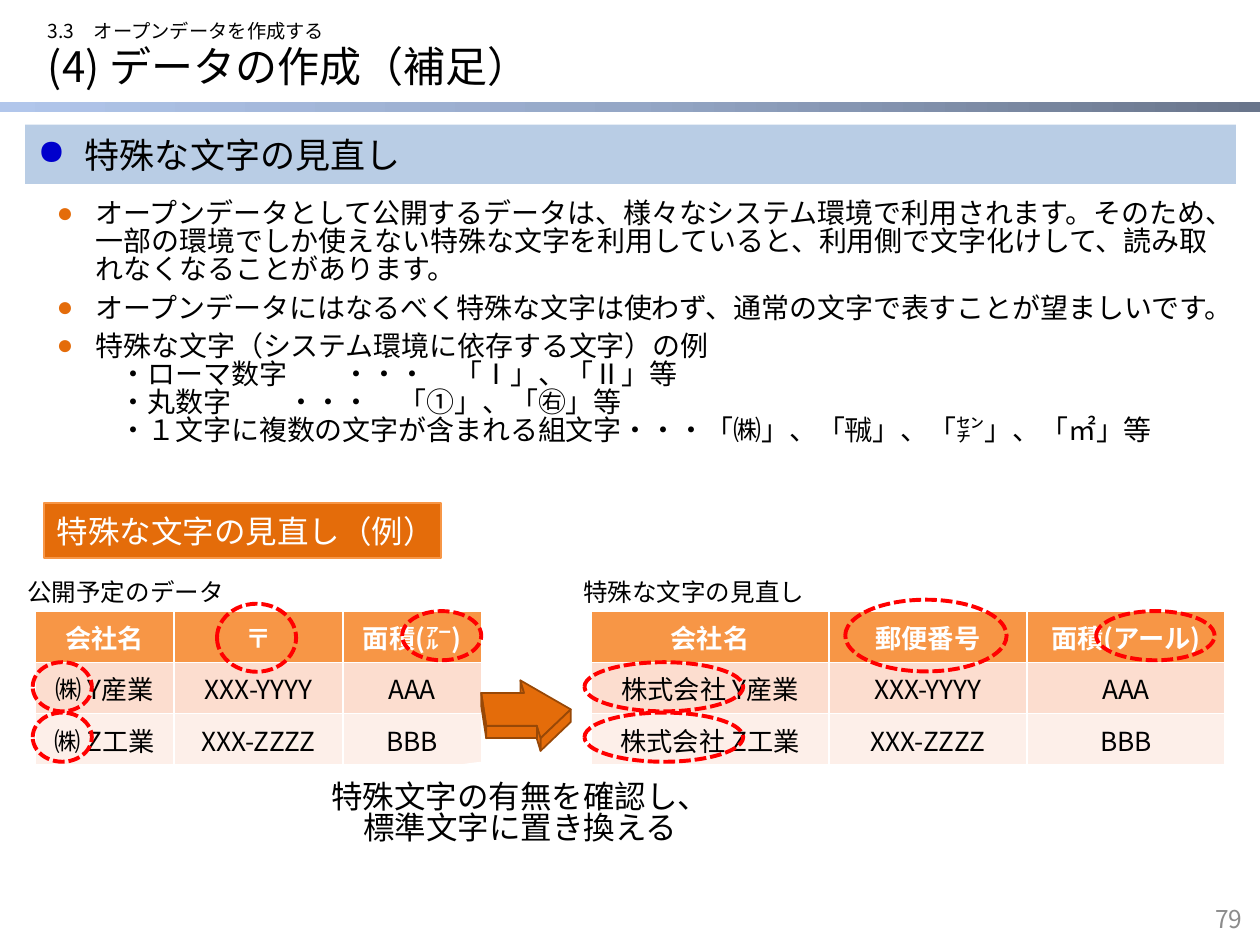
"""Build the slide on reviewing special characters in open data."""
from copy import deepcopy
from dataclasses import dataclass

from lxml import etree
from pptx import Presentation
from pptx.dml.color import RGBColor
from pptx.enum import dml, shapes, text
from pptx.oxml.ns import qn
from pptx.util import Pt


@dataclass(frozen=True)
class Theme:
    font: str = "Noto Sans CJK JP"
    black: str = "000000"
    white: str = "FFFFFF"
    gray: str = "8C8C8C"
    blue: str = "0000CC"
    band: str = "B9CDE5"
    orange: str = "E46C0A"
    header: str = "F79646"
    brown: str = "984807"
    red: str = "FF0000"
    rows: tuple = ("F79646", "FCDDCF", "FDEFE9")
    gradient: tuple = ("69758B", "95A7C6", "B1C6EB")
    title: int = 24
    heading: int = 20
    label: int = 18
    body: int = 16
    cell: int = 15
    small: int = 14
    section: int = 11


theme = Theme()
PP = text.PP_ALIGN


def write(tf, lines, size, color, align=PP.LEFT, spacing=1.0, bold=False):
    tf.text = "\n".join(lines)
    tf.vertical_anchor = text.MSO_ANCHOR.MIDDLE
    for p in tf.paragraphs:
        p.alignment, p.line_spacing = align, spacing
        p.space_before = Pt(0)
        for r in p.runs:
            r.font.size, r.font.bold = Pt(size), bold
            r.font.color.rgb = RGBColor.from_string(color)
            r.font.name = theme.font
            etree.SubElement(r.font._element, qn("a:ea"), typeface=theme.font)


def paint(sp, fill=None, line=None, width=1):
    sp.shadow.inherit = False
    if fill:
        sp.fill.solid()
        sp.fill.fore_color.rgb = RGBColor.from_string(fill)
    else:
        sp.fill.background()
    if line:
        sp.line.color.rgb = RGBColor.from_string(line)
        sp.line.width = Pt(width)
    else:
        sp.line.fill.background()


prs = Presentation()
prs.slide_width, prs.slide_height = Pt(720), Pt(540)
s = prs.slides.add_slide(prs.slide_layouts[1])
RECT, OVAL = shapes.MSO_SHAPE.RECTANGLE, shapes.MSO_SHAPE.OVAL

bar = s.shapes.add_shape(RECT, Pt(0), Pt(58.3), Pt(720), Pt(5.8))
paint(bar)
bar.fill.gradient()
bar.fill.gradient_angle = 180
stops = bar._element.find(".//" + qn("a:gsLst"))
stops.append(deepcopy(stops[0]))
for i, (stop, color) in enumerate(zip(bar.fill.gradient_stops, theme.gradient)):
    stop.position = i / 2
    stop.color.rgb = RGBColor.from_string(color)

title, body = s.placeholders
title.left, title.top, title.width, title.height = Pt(20.2), Pt(23), Pt(680.4), Pt(33.1)
write(title.text_frame, ["(4) データの作成（補足）"], theme.title, theme.black, spacing=0.9)

heading = s.shapes.add_shape(RECT, Pt(14.4), Pt(71.3), Pt(691.9), Pt(33.8))
paint(heading, theme.band)
write(heading.text_frame, ["特殊な文字の見直し"], theme.heading, theme.black)

body.left, body.top, body.width, body.height = Pt(25.2), Pt(111.6), Pt(680.4), Pt(158.4)
write(body.text_frame, [
    "オープンデータとして公開するデータは、様々なシステム環境で利用されます。そのため、一部の環境でしか使えない特殊な文字を利用していると、利用側で文字化けして、読み取れなくなることがあります。",
    "オープンデータにはなるべく特殊な文字は使わず、通常の文字で表すことが望ましいです。",
    "特殊な文字（システム環境に依存する文字）の例",
    "・ローマ数字　　・・・　「Ⅰ」、「Ⅱ」等",
    "・丸数字　　・・・　「①」、「㊨」等",
    "・１文字に複数の文字が含まれる組文字・・・「㈱」、「㍻」、「㌢」、「㎡」等",
], theme.body, theme.black, spacing=0.83)
body.text_frame.vertical_anchor = text.MSO_ANCHOR.TOP
body.text_frame.auto_size = text.MSO_AUTO_SIZE.NONE

items = body.text_frame.paragraphs
bullets = [(heading.text_frame.paragraphs[0], 27, theme.blue)]
bullets += [(p, 22.3, theme.orange) for p in items[:3]]
for p, indent, color in bullets:
    pPr = p._p.get_or_add_pPr()
    pPr.set("marL", str(Pt(indent)))
    pPr.set("indent", str(-Pt(indent)))
    clr = etree.SubElement(pPr, qn("a:buClr"))
    etree.SubElement(clr, qn("a:srgbClr"), val=color)
    etree.SubElement(pPr, qn("a:buChar"), char="●")
for p in items[:3]:
    p.space_before = Pt(6)
for p in items[3:]:
    p.level = 1
    pPr = p._p.get_or_add_pPr()
    pPr.set("marL", str(Pt(36)))
    pPr.set("indent", "0")
    etree.SubElement(pPr, qn("a:buNone"))

tables = [
    (20.2, (79.2, 96.5, 79.2), "㈱", ("会社名", "〒", "面積(㌃)")),
    (337.7, (136, 113.2, 113.2), "株式会社", ("会社名", "郵便番号", "面積(アール)")),
]
for left, widths, prefix, header in tables:
    rows = [header, (f"{prefix} Y産業", "XXX-YYYY", "AAA"), (f"{prefix} Z工業", "XXX-ZZZZ", "BBB")]
    table = s.shapes.add_table(3, 3, Pt(left), Pt(349.2), Pt(sum(widths)), Pt(87.8)).table
    for col, width in zip(table.columns, widths):
        col.width = Pt(width)
    for i, row in enumerate(rows):
        for j, value in enumerate(row):
            cell = table.cell(i, j)
            cell.margin_left = cell.margin_right = cell.margin_top = Pt(0.7)
            cell.margin_bottom = Pt(0)
            cell.fill.solid()
            cell.fill.fore_color.rgb = RGBColor.from_string(theme.rows[i])
            write(cell.text_frame, [value], theme.cell,
                  theme.black if i else theme.white, PP.CENTER, bold=not i)
            cell.vertical_anchor = text.MSO_ANCHOR.MIDDLE

label = s.shapes.add_shape(RECT, Pt(25.2), Pt(287.3), Pt(226.8), Pt(31.7))
paint(label, theme.orange, theme.header)
write(label.text_frame, ["特殊な文字の見直し（例）"], theme.label, theme.white)
label.text_frame.word_wrap = False

texts = [
    ("3.3　オープンデータを作成する", (20.2, 9.4, 686.2, 18.7), theme.section, theme.black, PP.LEFT, 0.8),
    ("公開予定のデータ", (8.6, 321.1, 187.2, 33.8), theme.small, theme.black, PP.LEFT, 1.0),
    ("特殊な文字の見直し", (326.2, 321.1, 225.4, 33.8), theme.small, theme.black, PP.LEFT, 1.0),
    ("79", (677.5, 514.1, 39.6, 22.3), theme.small, theme.gray, PP.RIGHT, 1.0),
]
for line, box, size, color, align, spacing in texts:
    tf = s.shapes.add_textbox(*map(Pt, box)).text_frame
    tf.word_wrap = True
    write(tf, [line], size, color, align, spacing)

marks = [(124, 345, 45.2, 38.9), (229.8, 349.2, 45.2, 28.1),
         (626.4, 349.2, 67.7, 28.1), (483, 342.7, 92.2, 41)]
for left, width in ((18.7, 33.8), (334, 90.7)):
    marks += [(left, top, width, 28.1) for top in (378.4, 407.2)]
for box in marks:
    mark = s.shapes.add_shape(OVAL, *map(Pt, box))
    paint(mark, line=theme.red, width=2.25)
    mark.line.dash_style = dml.MSO_LINE.SQUARE_DOT

caption = s.shapes.add_shape(OVAL, Pt(212.4), Pt(434.2), Pt(169.9), Pt(62.6))
paint(caption, theme.white)
write(caption.text_frame, ["特殊文字の有無を確認し、", "標準文字に置き換える"],
      theme.label, theme.black, PP.CENTER, 0.83)
caption.text_frame.word_wrap = False

front = [(297.4, 388.8), (326.2, 405.4), (308.9, 421.9), (306.7, 414.7),
         (277.9, 414.7), (275, 396), (299.5, 396)]
depth = 7.2
sides = [[a, b, (b[0], b[1] + depth), (a[0], a[1] + depth)]
         for a, b in zip(front, front[1:] + front[:1])]
arrow = s.shapes.add_group_shape()
for face in [sides[6], front, *sides[1:5]]:
    points = [(Pt(x), Pt(y)) for x, y in face]
    outline = arrow.shapes.build_freeform(*points[0])
    outline.add_line_segments(points[1:], close=True)
    paint(outline.convert_to_shape(), theme.orange, theme.brown)

prs.save("out.pptx")
